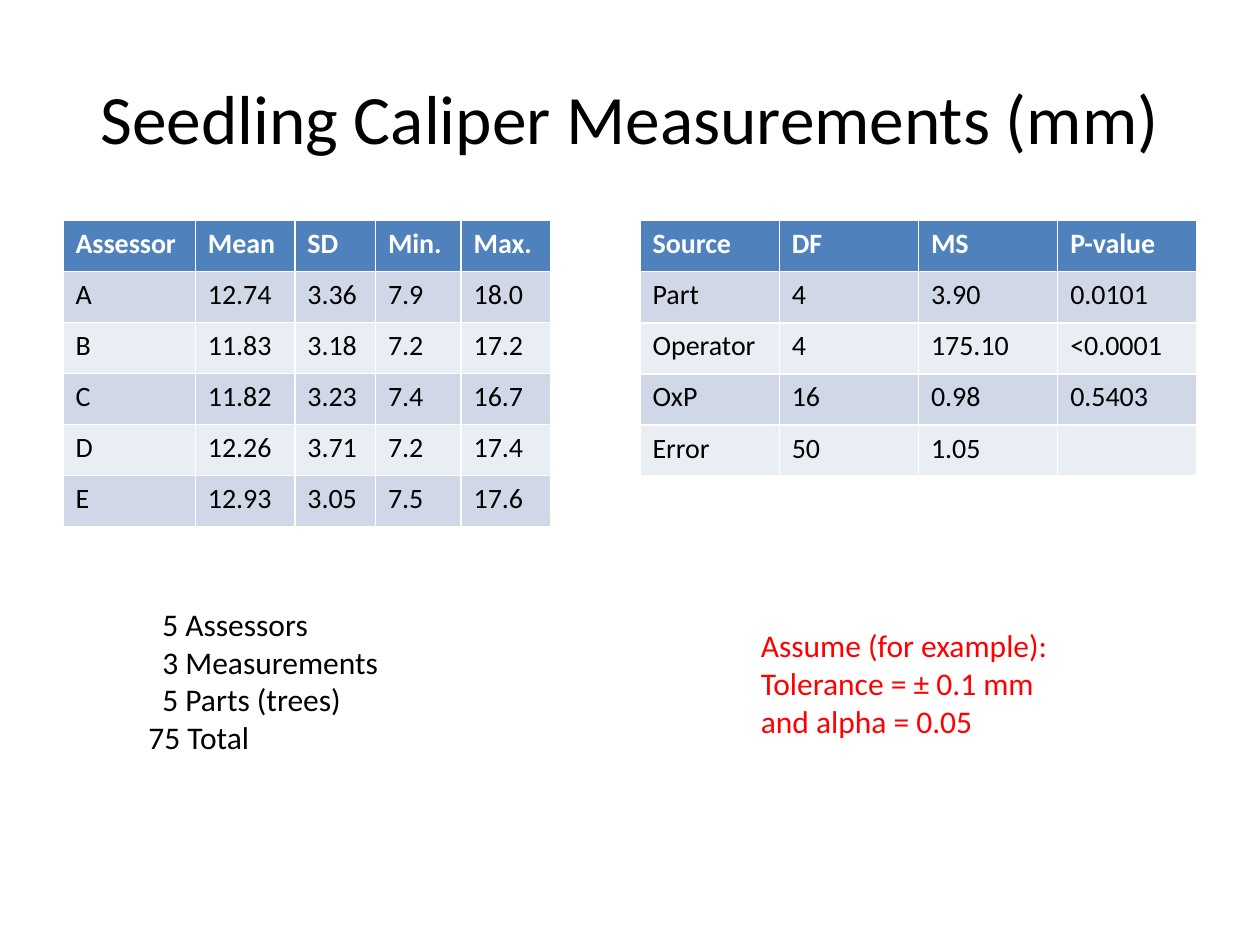
"""Build the seedling caliper measurement slide with its two result tables."""
from pptx import Presentation
from pptx.dml.color import RGBColor
from pptx.enum.text import MSO_ANCHOR, PP_ALIGN
from pptx.util import Inches, Pt

THEME = {
    "font": "Calibri",
    "title_size": 39.6, "note_size": 18, "cell_size": 16,
    "text": "000000", "accent": "FF0000", "header_text": "FFFFFF",
    "header": "4F81BD", "bands": ("D0D8E8", "E9EDF4"),
}

TITLE = "Seedling Caliper Measurements (mm)"
TABLES = [
    {
        "box": (0.5, 1.75, 3.87, 2.43),
        "widths": (1.05, 0.79, 0.64, 0.68, 0.71),
        "rows": [
            ("Assessor", "Mean", "SD", "Min.", "Max."),
            ("A", "12.74", "3.36", "7.9", "18.0"),
            ("B", "11.83", "3.18", "7.2", "17.2"),
            ("C", "11.82", "3.23", "7.4", "16.7"),
            ("D", "12.26", "3.71", "7.2", "17.4"),
            ("E", "12.93", "3.05", "7.5", "17.6"),
        ],
    },
    {
        "box": (5.08, 1.75, 4.42, 2.03),
        "widths": (1.105,) * 4,
        "rows": [
            ("Source", "DF", "MS", "P-value"),
            ("Part", "4", "3.90", "0.0101"),
            ("Operator", "4", "175.10", "<0.0001"),
            ("OxP", "16", "0.98", "0.5403"),
            ("Error", "50", "1.05", ""),
        ],
    },
]
NOTES = [
    {
        "box": (1.08, 4.75, 2.05, 1.62), "color": THEME["text"], "wrap": True,
        "lines": ["5 Assessors", "3 Measurements", "5 Parts (trees)", "75 Total"],
        "indents": (0.11, 0.11, 0.11, 0),
    },
    {
        "box": (5.94, 4.92, 2.5, 1.01), "color": THEME["accent"], "wrap": False,
        "lines": ["Assume (for example):", "Tolerance = ± 0.1 mm", "and alpha = 0.05"],
        "indents": (0, 0, 0),
    },
]


def write(frame, lines, size, color, bold=False, align=PP_ALIGN.LEFT, indents=None):
    """Write lines as formatted paragraphs into a text frame."""
    for index, line in enumerate(lines):
        paragraph = frame.paragraphs[0] if index == 0 else frame.add_paragraph()
        paragraph.alignment = align
        paragraph.font.size = Pt(size)
        if indents and indents[index]:
            paragraph._p.get_or_add_pPr().set("marL", str(Inches(indents[index])))
        if line:
            run = paragraph.add_run()
            run.text = line
            run.font.name = THEME["font"]
            run.font.size = Pt(size)
            run.font.bold = bold
            run.font.color.rgb = RGBColor.from_string(color)


def add_title(slide):
    """Place and format the title placeholder."""
    title = slide.shapes.title
    title.left, title.top, title.width, title.height = map(Inches, (0.5, 0.3, 9, 1.25))
    title.text_frame.vertical_anchor = MSO_ANCHOR.MIDDLE
    write(title.text_frame, [TITLE], THEME["title_size"], THEME["text"],
          align=PP_ALIGN.CENTER)


def add_results(slide, box, widths, rows):
    """Add a banded results table with a header row."""
    results = slide.shapes.add_table(len(rows), len(widths), *map(Inches, box)).table
    for column, width in zip(results.columns, widths):
        column.width = Inches(width)
    for r, row in enumerate(rows):
        header = r == 0
        fill = THEME["header"] if header else THEME["bands"][(r - 1) % 2]
        color = THEME["header_text"] if header else THEME["text"]
        for c, value in enumerate(row):
            cell = results.cell(r, c)
            cell.fill.solid()
            cell.fill.fore_color.rgb = RGBColor.from_string(fill)
            write(cell.text_frame, [value], THEME["cell_size"], color, bold=header)


def add_note(slide, box, lines, color, wrap, indents):
    """Add a free-standing note."""
    frame = slide.shapes.add_textbox(*map(Inches, box)).text_frame
    frame.word_wrap = wrap
    write(frame, lines, THEME["note_size"], color, indents=indents)


def main():
    """Assemble and save the slide."""
    deck = Presentation()
    deck.slide_width, deck.slide_height = Inches(10), Inches(7.5)
    slide = deck.slides.add_slide(deck.slide_layouts[5])
    add_title(slide)
    for table in TABLES:
        add_results(slide, **table)
    for note in NOTES:
        add_note(slide, **note)
    deck.save("out.pptx")


if __name__ == "__main__":
    main()
